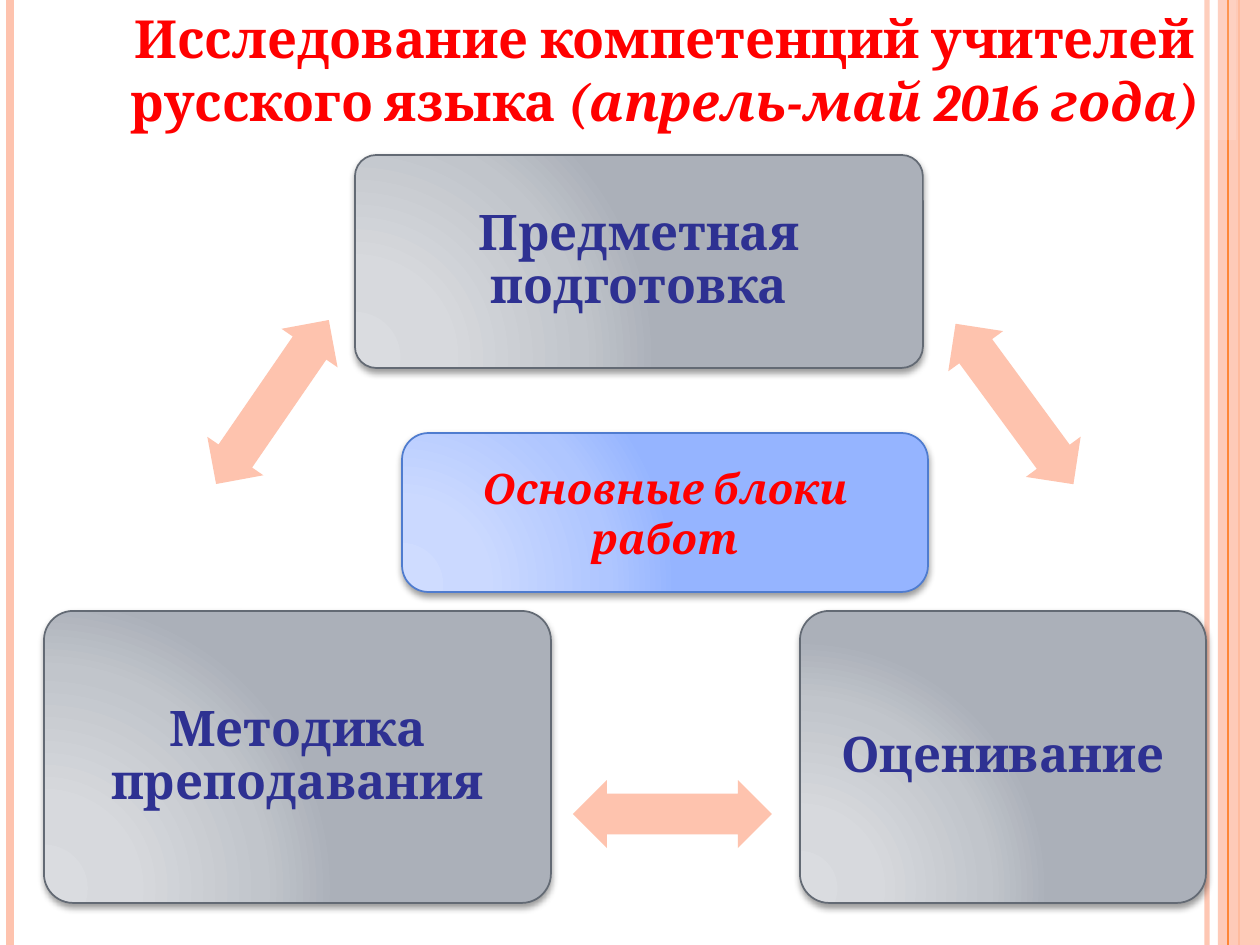
from lxml import etree
from pptx import Presentation
from pptx.dml.color import RGBColor
from pptx.enum.shapes import MSO_CONNECTOR as Connector, MSO_SHAPE as Shape
from pptx.enum.text import MSO_ANCHOR as Anchor, PP_ALIGN as Align
from pptx.oxml import parse_xml
from pptx.oxml.ns import qn
from pptx.util import Pt

PX = 914400 / 126
WIDTH, HEIGHT = 1260, 945
NS = 'xmlns:a="http://schemas.openxmlformats.org/drawingml/2006/main"'
PEACH, ORANGE, RED, INDIGO = "FEC3AE", "FE8637", "FF0000", "2E3192"
GRAY = ("DADCE0", "D7D9DD", "C1C5CB", "ABB0B9")
BLUE = ("CFDCFF", "CBD9FF", "AFC6FF", "95B4FF")
STOPS = (0, 30, 75, 100)

TITLE = [("Исследование компетенций учителей русского языка ", False),
         ("(апрель-май 2016 года)", True)]
BLOCKS = [("Предметная подготовка", (355, 155, 568, 213)),
          ("Оценивание", (800, 611, 406, 292)),
          ("Методика преподавания", (44, 611, 507, 292))]
CENTER = ("Основные блоки работ", (402, 433, 526, 159))
ARROWS = [(915, 370, 53.7), (573, 780, 0), (173, 368, 304.5)]
ARROW_SIZE = (199, 68)


def px(value):
    return round(value * PX)


def color(value):
    return RGBColor.from_string(value)


def set_alpha(fill, percent):
    tone = fill._xPr.find(qn("a:solidFill"))[0]
    etree.SubElement(tone, qn("a:alpha"), val=str(percent * 1000))


def add_stripe(page, x, tone, width, alpha=None):
    stripe = page.shapes.add_connector(Connector.STRAIGHT, px(x), 0, px(x), px(HEIGHT))
    stripe.line.width = Pt(width)
    stripe.line.color.rgb = color(tone)
    if alpha:
        set_alpha(stripe.line.fill, alpha)
    etree.SubElement(stripe._element.spPr, qn("a:effectLst"))


def add_shape(page, kind, place, fill, alpha=None):
    shape = page.shapes.add_shape(kind, *map(px, place))
    shape.shadow.inherit = False
    shape.fill.solid()
    shape.fill.fore_color.rgb = color(fill)
    if alpha:
        set_alpha(shape.fill, alpha)
    shape.line.fill.background()
    return shape


def write(shape, spans, size, tone, anchor=Anchor.MIDDLE, spacing=1.0, inset=None):
    frame = shape.text_frame
    frame.word_wrap = True
    frame.vertical_anchor = anchor
    if inset:
        frame.margin_left = frame.margin_right = px(inset)
        frame.margin_top = frame.margin_bottom = px(inset)
    para = frame.paragraphs[0]
    para.alignment = Align.CENTER
    para.line_spacing = spacing
    for text, italic in spans:
        span = para.add_run()
        span.text = text
        span.font.name = "Cambria"
        span.font.size = Pt(size)
        span.font.bold = True
        span.font.italic = italic
        span.font.color.rgb = color(tone)


def add_box(page, place, tones, outline):
    box = add_shape(page, Shape.ROUNDED_RECTANGLE, place, tones[-1])
    box.line.color.rgb = color(outline)
    box.line.width = Pt(1)
    props = box._element.spPr
    stops = "".join(f'<a:gs pos="{at * 1000}"><a:srgbClr val="{tone}"/></a:gs>'
                    for at, tone in zip(STOPS, tones))
    gradient = parse_xml(
        f'<a:gradFill {NS} rotWithShape="1"><a:gsLst>{stops}</a:gsLst><a:path path="circle">'
        '<a:fillToRect l="5000" t="100000" r="120000" b="10000"/></a:path></a:gradFill>')
    props.replace(props.find(qn("a:solidFill")), gradient)
    props.find(qn("a:effectLst")).append(parse_xml(
        f'<a:outerShdw {NS} blurRad="{Pt(4)}" dist="{Pt(2)}" dir="5400000" rotWithShape="0">'
        '<a:srgbClr val="000000"><a:alpha val="40000"/></a:srgbClr></a:outerShdw>'))
    return box


def main():
    deck = Presentation()
    deck.slide_width, deck.slide_height = px(WIDTH), px(HEIGHT)
    page = deck.slides.add_slide(deck.slide_layouts[6])

    add_stripe(page, 1207, PEACH, 3, alpha=93)
    add_stripe(page, 10, PEACH, 4.5)
    add_stripe(page, 1239, ORANGE, 1.5)
    add_shape(page, Shape.RECTANGLE, (1218, 0, 42, HEIGHT), PEACH, alpha=87)
    add_stripe(page, 1228, ORANGE, 0.75)

    title = add_shape(page, Shape.RECTANGLE, (94, 0, 1142, 140), "FFFFFF", alpha=13)
    write(title, TITLE, 30, RED, anchor=Anchor.TOP)

    for text, place in BLOCKS:
        box = add_box(page, place, GRAY, "636A74")
        box.adjustments[0] = 0.1
        write(box, [(text, False)], 28, INDIGO, spacing=0.9, inset=23)

    for x, y, angle in ARROWS:
        arrow = add_shape(page, Shape.LEFT_RIGHT_ARROW, (x, y, *ARROW_SIZE), PEACH)
        arrow.adjustments[0], arrow.adjustments[1] = 0.6, 0.5
        arrow.rotation = angle

    text, place = CENTER
    write(add_box(page, place, BLUE, "4F7CCF"), [(text, True)], 24, RED)

    deck.save("out.pptx")


if __name__ == "__main__":
    main()
